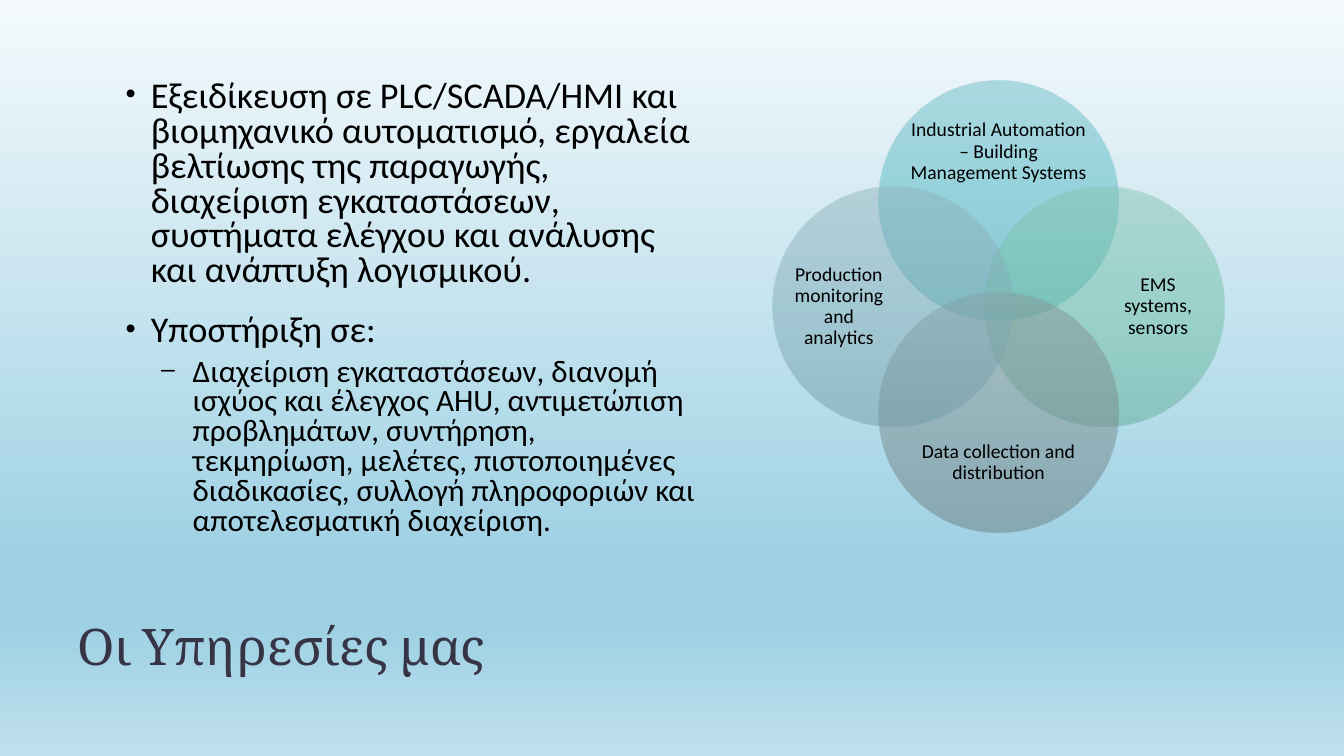
from dataclasses import dataclass

from lxml.etree import SubElement
from pptx import Presentation
from pptx.dml.color import RGBColor
from pptx.enum.shapes import MSO_SHAPE as Preset
from pptx.enum.text import MSO_ANCHOR as Anchor, MSO_AUTO_SIZE as AutoSize, PP_ALIGN as Align
from pptx.oxml.ns import qn
from pptx.util import Pt

EMU_PER_PX = 9525
SLIDE_WIDTH, SLIDE_HEIGHT = 1280, 720
CENTER_X, CENTER_Y = 951, 292
CIRCLE_SIZE, CIRCLE_OFFSET = 228, 101
LABEL_OFFSET = 152

COLORS = {
    "title": "373545",
    "text": "000000",
    "sky_top": "F4FAFC",
    "sky_middle": "9FD1E4",
    "sky_bottom": "BFE0ED",
}


@dataclass
class Stop:
    position: int
    color: str
    opacity: int = 100


@dataclass
class Bullet:
    text: str
    level: int
    size: float
    mark: str
    before: int
    left: int
    hanging: int


@dataclass
class Service:
    text: str
    step_x: int
    step_y: int
    label_width: int
    label_height: int
    colors: tuple[str, str, str]


SKY = [
    Stop(0, COLORS["sky_top"]),
    Stop(74, COLORS["sky_middle"]),
    Stop(83, COLORS["sky_middle"]),
    Stop(100, COLORS["sky_bottom"]),
]

BULLETS = [
    Bullet("Εξειδίκευση σε PLC/SCADA/HMI και βιομηχανικό αυτοματισμό, εργαλεία "
           "βελτίωσης της παραγωγής, διαχείριση εγκαταστάσεων, συστήματα ελέγχου "
           "και ανάλυσης και ανάπτυξη λογισμικού.", 0, 25.9, "•", 18, 24, 24),
    Bullet("Υποστήριξη σε:", 0, 25.9, "•", 18, 24, 24),
    Bullet("Διαχείριση εγκαταστάσεων, διανομή ισχύος και έλεγχος AHU, αντιμετώπιση "
           "προβλημάτων, συντήρηση, τεκμηρίωση, μελέτες, πιστοποιημένες διαδικασίες, "
           "συλλογή πληροφοριών και αποτελεσματική διαχείριση.", 1, 22.2, "–", 6, 64, 30),
]

SERVICES = [
    Service("Industrial Automation – Building Management Systems", 0, -1, 176, 73,
            ("6FBEC7", "53BAC5", "44AAB5")),
    Service("EMS systems, sensors", 1, 0, 88, 176, ("86C5B1", "71C1A8", "61AF97")),
    Service("Data collection and distribution", 0, 1, 176, 73,
            ("89999A", "798D8F", "6A7E80")),
    Service("Production monitoring and analytics", -1, 0, 88, 176,
            ("92B5BE", "82AEB8", "709CA7")),
]


def px(length: int) -> int:
    return length * EMU_PER_PX


def frame(left: int, top: int, width: int, height: int) -> tuple[int, ...]:
    return tuple(px(length) for length in (left, top, width, height))


def centered(x: int, y: int, width: int, height: int) -> tuple[int, ...]:
    return frame(x - width // 2, y - height // 2, width, height)


def place(box, left: int, top: int, width: int, height: int) -> None:
    box.left, box.top, box.width, box.height = frame(left, top, width, height)


def paint_gradient(fill, owner, stops: list[Stop]) -> None:
    fill.gradient()
    fill.gradient_angle = 270
    stop_list = owner.find(".//" + qn("a:gsLst"))
    for old_stop in list(stop_list):
        stop_list.remove(old_stop)
    for stop in stops:
        mark = SubElement(stop_list, qn("a:gs"), pos=str(stop.position * 1000))
        color = SubElement(mark, qn("a:srgbClr"), val=stop.color)
        if stop.opacity < 100:
            SubElement(color, qn("a:alpha"), val=str(stop.opacity * 1000))


def add_span(para, text: str, size: float, font: str, color: str) -> None:
    span = para.add_run()
    span.text = text
    span.font.size = Pt(size)
    span.font.name = font
    span.font.color.rgb = RGBColor.from_string(COLORS[color])


def fill_title(box) -> None:
    place(box, 64, 536, 1152, 112)
    text = box.text_frame
    text.auto_size = AutoSize.NONE
    text.vertical_anchor = Anchor.BOTTOM
    para = text.paragraphs[0]
    para.alignment = Align.LEFT
    para.line_spacing = 0.8
    add_span(para, "Οι Υπηρεσίες μας", 36, "Cambria", "title")


def add_bullet(para, bullet: Bullet) -> None:
    para.level = bullet.level
    para.line_spacing = 0.8
    para.space_before = Pt(bullet.before)
    add_span(para, bullet.text, bullet.size, "Calibri", "text")
    properties = para._p.get_or_add_pPr()
    properties.set("marL", str(px(bullet.left)))
    properties.set("indent", str(-px(bullet.hanging)))
    color = SubElement(properties, qn("a:buClr"))
    SubElement(color, qn("a:srgbClr"), val=COLORS["text"])
    SubElement(properties, qn("a:buSzPct"), val="80000")
    SubElement(properties, qn("a:buFont"), typeface="Arial")
    SubElement(properties, qn("a:buChar"), char=bullet.mark)


def fill_body(box) -> None:
    place(box, 110, 72, 567, 485)
    text = box.text_frame
    text.auto_size = AutoSize.NONE
    for index, bullet in enumerate(BULLETS):
        add_bullet(text.add_paragraph() if index else text.paragraphs[0], bullet)


def add_circle(page, service: Service) -> None:
    circle = page.shapes.add_shape(Preset.OVAL, *centered(
        CENTER_X + service.step_x * CIRCLE_OFFSET,
        CENTER_Y + service.step_y * CIRCLE_OFFSET, CIRCLE_SIZE, CIRCLE_SIZE))
    circle.shadow.inherit = False
    circle.line.fill.background()
    stops = [Stop(place, color, 50) for place, color in zip((0, 50, 100), service.colors)]
    paint_gradient(circle.fill, circle._element, stops)


def add_label(page, service: Service) -> None:
    box = page.shapes.add_textbox(*centered(
        CENTER_X + service.step_x * LABEL_OFFSET,
        CENTER_Y + service.step_y * LABEL_OFFSET * 37 // 38,
        service.label_width, service.label_height))
    text = box.text_frame
    text.word_wrap = True
    text.vertical_anchor = Anchor.MIDDLE
    text.margin_left = text.margin_right = text.margin_top = text.margin_bottom = 0
    para = text.paragraphs[0]
    para.alignment = Align.CENTER
    para.line_spacing = 0.9
    add_span(para, service.text, 14, "Calibri", "text")


def main() -> None:
    deck = Presentation()
    deck.slide_width, deck.slide_height = px(SLIDE_WIDTH), px(SLIDE_HEIGHT)
    page = deck.slides.add_slide(deck.slide_layouts[1])
    paint_gradient(page.background.fill, page._element, SKY)
    fill_title(page.shapes.title)
    fill_body(page.placeholders[1])
    for service in SERVICES:
        add_circle(page, service)
        add_label(page, service)
    deck.save("out.pptx")


if __name__ == "__main__":
    main()
